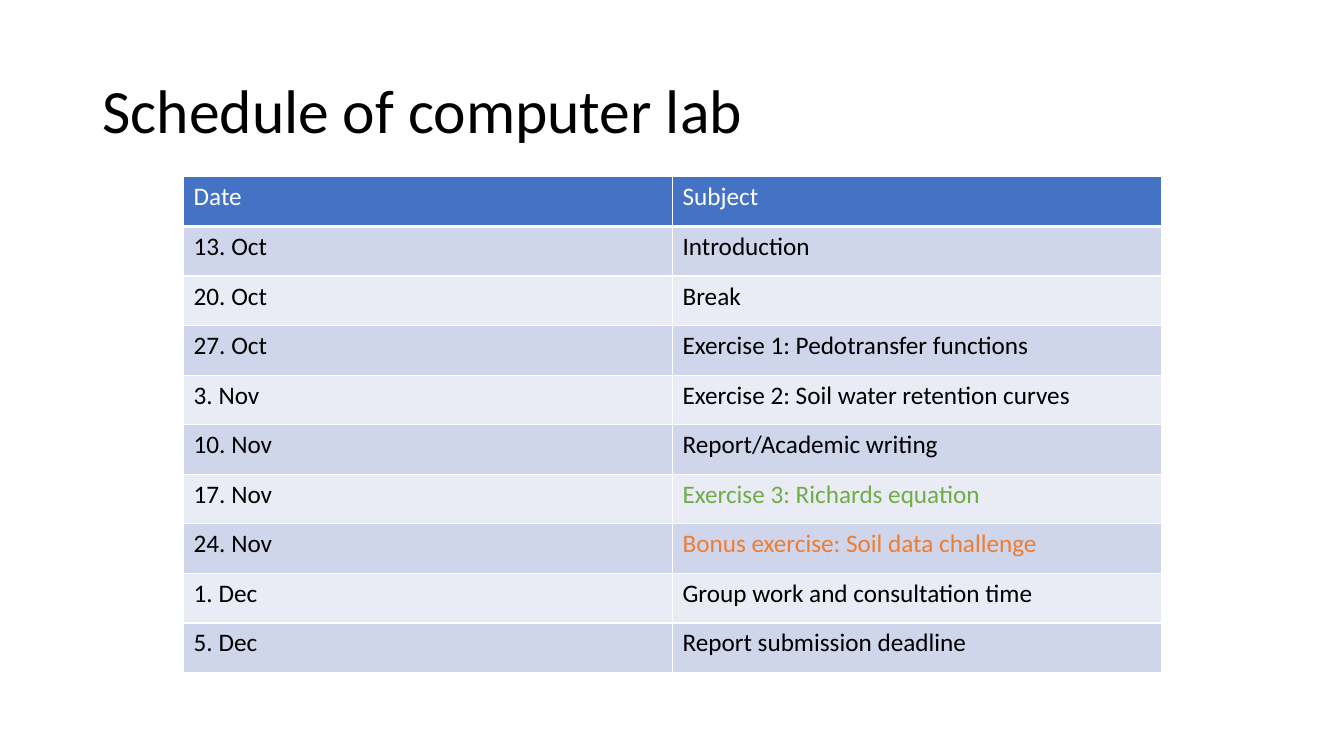
from dataclasses import dataclass

from lxml.etree import SubElement
from pptx import Presentation
from pptx.dml.color import RGBColor
from pptx.enum.text import MSO_ANCHOR, MSO_AUTO_SIZE, PP_ALIGN
from pptx.oxml.ns import qn
from pptx.slide import Slide
from pptx.table import _Cell as Cell
from pptx.text.text import _Paragraph as Paragraph
from pptx.util import Pt


@dataclass(frozen=True)
class Theme:
    font: str = "Calibri"
    title_size: float = 44
    table_size: float = 18
    black: str = "000000"
    white: str = "FFFFFF"
    header: str = "4472C4"
    bands: tuple[str, str] = ("CFD5EA", "E9EBF5")
    green: str = "70AD47"
    orange: str = "ED7D31"
    rule: float = 1
    header_rule: float = 3


THEME = Theme()


@dataclass(frozen=True)
class Session:
    date: str
    subject: str
    subject_color: str = THEME.black


SESSIONS = [
    Session("13. Oct", "Introduction"),
    Session("20. Oct", "Break"),
    Session("27. Oct", "Exercise 1: Pedotransfer functions"),
    Session("3. Nov", "Exercise 2: Soil water retention curves"),
    Session("10. Nov", "Report/Academic writing"),
    Session("17. Nov", "Exercise 3: Richards equation", THEME.green),
    Session("24. Nov", "Bonus exercise: Soil data challenge", THEME.orange),
    Session("1. Dec", "Group work and consultation time"),
    Session("5. Dec", "Report submission deadline"),
]
COLUMN_WIDTH = 349.2
ROW_HEIGHT = 35.43


def add_run(paragraph: Paragraph, text: str, size: float, color: str) -> None:
    run = paragraph.add_run()
    run.text = text
    run.font.name = THEME.font
    run.font.size = Pt(size)
    run.font.bold = False
    run.font.color.rgb = RGBColor.from_string(color)


def add_borders(cell: Cell, bottom: float) -> None:
    properties = cell._tc.get_or_add_tcPr()
    widths = {"a:lnL": THEME.rule, "a:lnR": THEME.rule, "a:lnT": THEME.rule, "a:lnB": bottom}
    for tag, width in widths.items():
        border = SubElement(properties, qn(tag), w=str(Pt(width)))
        SubElement(SubElement(border, qn("a:solidFill")), qn("a:srgbClr"), val=THEME.white)


def fill_cell(cell: Cell, text: str, color: str, fill: str, bottom: float) -> None:
    add_borders(cell, bottom)
    cell.fill.solid()
    cell.fill.fore_color.rgb = RGBColor.from_string(fill)
    add_run(cell.text_frame.paragraphs[0], text, THEME.table_size, color)


def add_title(slide: Slide, text: str) -> None:
    title = slide.shapes.title
    title.left, title.top, title.width, title.height = Pt(66), Pt(28.75), Pt(828), Pt(104.38)
    frame = title.text_frame
    frame.word_wrap = True
    frame.auto_size = MSO_AUTO_SIZE.NONE
    frame.vertical_anchor = MSO_ANCHOR.MIDDLE
    heading = frame.paragraphs[0]
    heading.alignment = PP_ALIGN.LEFT
    heading.line_spacing = 0.9
    add_run(heading, text, THEME.title_size, THEME.black)


def add_schedule(slide: Slide, sessions: list[Session]) -> None:
    row_count = len(sessions) + 1
    schedule = slide.shapes.add_table(
        row_count, 2, Pt(131.2), Pt(126.3), Pt(2 * COLUMN_WIDTH), Pt(row_count * ROW_HEIGHT)
    ).table
    for column in schedule.columns:
        column.width = Pt(COLUMN_WIDTH)
    for row in schedule.rows:
        row.height = Pt(ROW_HEIGHT)

    # Header row
    for column, label in enumerate(("Date", "Subject")):
        fill_cell(schedule.cell(0, column), label, THEME.white, THEME.header, THEME.header_rule)

    # One banded row per session
    for index, session in enumerate(sessions):
        band = THEME.bands[index % 2]
        entries = ((session.date, THEME.black), (session.subject, session.subject_color))
        for column, (text, color) in enumerate(entries):
            fill_cell(schedule.cell(index + 1, column), text, color, band, THEME.rule)


def main() -> None:
    deck = Presentation()
    deck.slide_width, deck.slide_height = Pt(960), Pt(540)
    slide = deck.slides.add_slide(deck.slide_layouts.get_by_name("Title Only"))
    slide.background.fill.solid()
    slide.background.fill.fore_color.rgb = RGBColor.from_string(THEME.white)
    add_title(slide, "Schedule of computer lab")
    add_schedule(slide, SESSIONS)
    deck.save("out.pptx")


if __name__ == "__main__":
    main()
